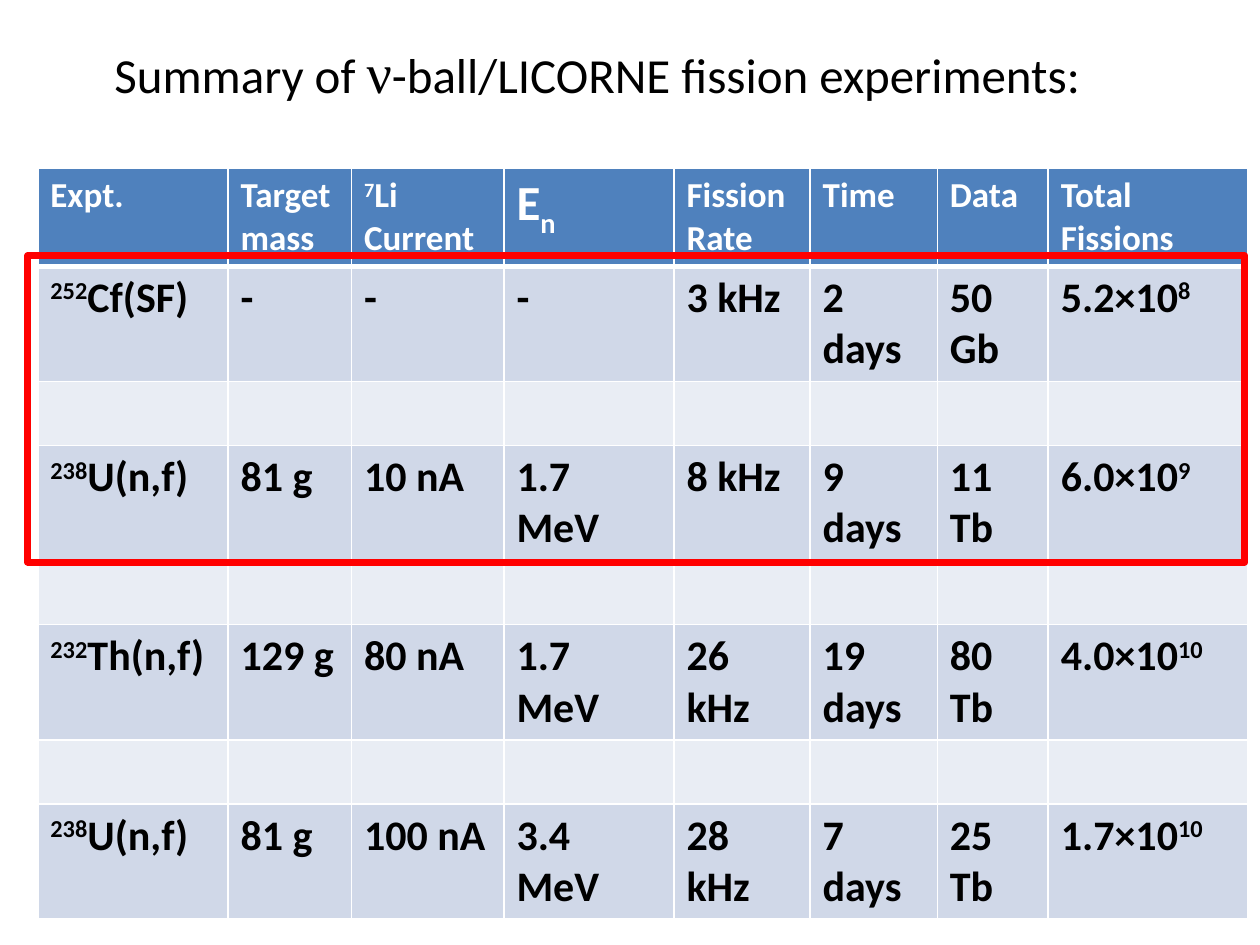
from lxml.etree import SubElement
from pptx import Presentation
from pptx.dml.color import RGBColor
from pptx.enum.shapes import MSO_SHAPE as Shape
from pptx.oxml.ns import qn
from pptx.util import Pt

COLUMN_WIDTHS = [108.7, 70.6, 87.1, 97.2, 77.8, 72.7, 63.4, 113.8]
HEADER = ["Expt.", "Target\nmass", "^7^Li\nCurrent", "E_n_", "Fission\nRate",
          "Time", "Data", "Total\nFissions"]
EXPERIMENTS = [
    ["^252^Cf(SF)", "-", "-", "-", "3 kHz", "2 days", "50 Gb", "5.2×10^8^"],
    ["^238^U(n,f)", "81 g", "10 nA", "1.7 MeV", "8 kHz", "9 days", "11 Tb", "6.0×10^9^"],
    ["^232^Th(n,f)", "129 g", "80 nA", "1.7 MeV", "26 kHz", "19 days", "80 Tb", "4.0×10^10^"],
    ["^238^U(n,f)", "81 g", "100 nA", "3.4 MeV", "28 kHz", "7 days", "25 Tb", "1.7×10^10^"],
]
HEADER_HEIGHT, DATA_HEIGHT, GAP_HEIGHT = 55.5, 65.8, 36.6
BASELINES = {"^": "30000", "_": "-25000"}


def color(value):
    return RGBColor.from_string(value)


class SlideBuilder:
    font = "Calibri"
    ink = "000000"
    paper = "FFFFFF"
    header_fill = "4F81BD"
    data_fill = "D0D8E8"
    gap_fill = "E9EDF4"
    accent = "FF0000"

    def __init__(self, slide):
        self.slide = slide

    def run(self, paragraph, text, ink, **formats):
        run = paragraph.add_run()
        run.text = text
        for name, value in ({"name": self.font} | formats).items():
            setattr(run.font, name, value)
        run.font.color.rgb = color(ink)
        return run

    def title(self, left, top, width, height, pieces):
        box = self.slide.shapes.add_textbox(Pt(left), Pt(top), Pt(width), Pt(height))
        box.text_frame.word_wrap = False
        paragraph = box.text_frame.paragraphs[0]
        for text, font, size in pieces:
            self.run(paragraph, text, self.ink, name=font, size=Pt(size))

    def frame(self, left, top, width, height, line_width):
        shape = self.slide.shapes.add_shape(
            Shape.RECTANGLE, Pt(left), Pt(top), Pt(width), Pt(height))
        shape.shadow.inherit = False
        shape.fill.background()
        shape.line.color.rgb = color(self.accent)
        shape.line.width = Pt(line_width)

    def borders(self, cell, bottom):
        properties = cell._tc.get_or_add_tcPr()
        for side, width in {"L": 1, "R": 1, "T": 1, "B": bottom}.items():
            line = SubElement(properties, qn(f"a:ln{side}"), w=str(Pt(width)))
            fill = SubElement(line, qn("a:solidFill"))
            SubElement(fill, qn("a:srgbClr"), val=self.paper)

    def cell_text(self, cell, text, ink, size):
        for index, line in enumerate(text.split("\n")):
            frame = cell.text_frame
            paragraph = frame.add_paragraph() if index else frame.paragraphs[0]
            mark = "_" if "_" in line else "^"
            for position, piece in enumerate(line.split(mark)):
                if piece:
                    run = self.run(paragraph, piece, ink, size=Pt(size), bold=True)
                    if position % 2:
                        run.font._element.set("baseline", BASELINES[mark])

    def table(self, left, top, widths, rows):
        heights = [height for height, *_ in rows]
        table = self.slide.shapes.add_table(
            len(rows), len(widths), Pt(left), Pt(top),
            Pt(sum(widths)), Pt(sum(heights))).table
        for column, width in zip(table.columns, widths):
            column.width = Pt(width)
        for row, (height, texts, fill, ink, size) in zip(table.rows, rows):
            row.height = Pt(height)
            for cell, text in zip(row.cells, texts):
                self.borders(cell, bottom=3 if texts is HEADER else 1)
                cell.fill.solid()
                cell.fill.fore_color.rgb = color(fill)
                self.cell_text(cell, text, ink, 28 if text == "E_n_" else size)


def main():
    presentation = Presentation()
    presentation.slide_width, presentation.slide_height = Pt(720), Pt(540)
    builder = SlideBuilder(presentation.slides.add_slide(presentation.slide_layouts[6]))

    rows = [(HEADER_HEIGHT, HEADER, builder.header_fill, builder.paper, 20)]
    for index, experiment in enumerate(EXPERIMENTS):
        if index:
            rows.append((GAP_HEIGHT, [""] * len(HEADER), builder.gap_fill, builder.ink, 24))
        rows.append((DATA_HEIGHT, experiment, builder.data_fill, builder.ink, 24))
    builder.table(21.6, 96, COLUMN_WIDTHS, rows)

    builder.title(58.3, 18, 572.4, 46, [
        ("Summary of ", "Calibri", 28),
        ("ν", "Times New Roman", 32),
        ("-ball/LICORNE fission experiments:", "Calibri", 28),
    ])
    builder.frame(15.9, 146.2, 695.5, 175, 4)
    presentation.save("out.pptx")


if __name__ == "__main__":
    main()
